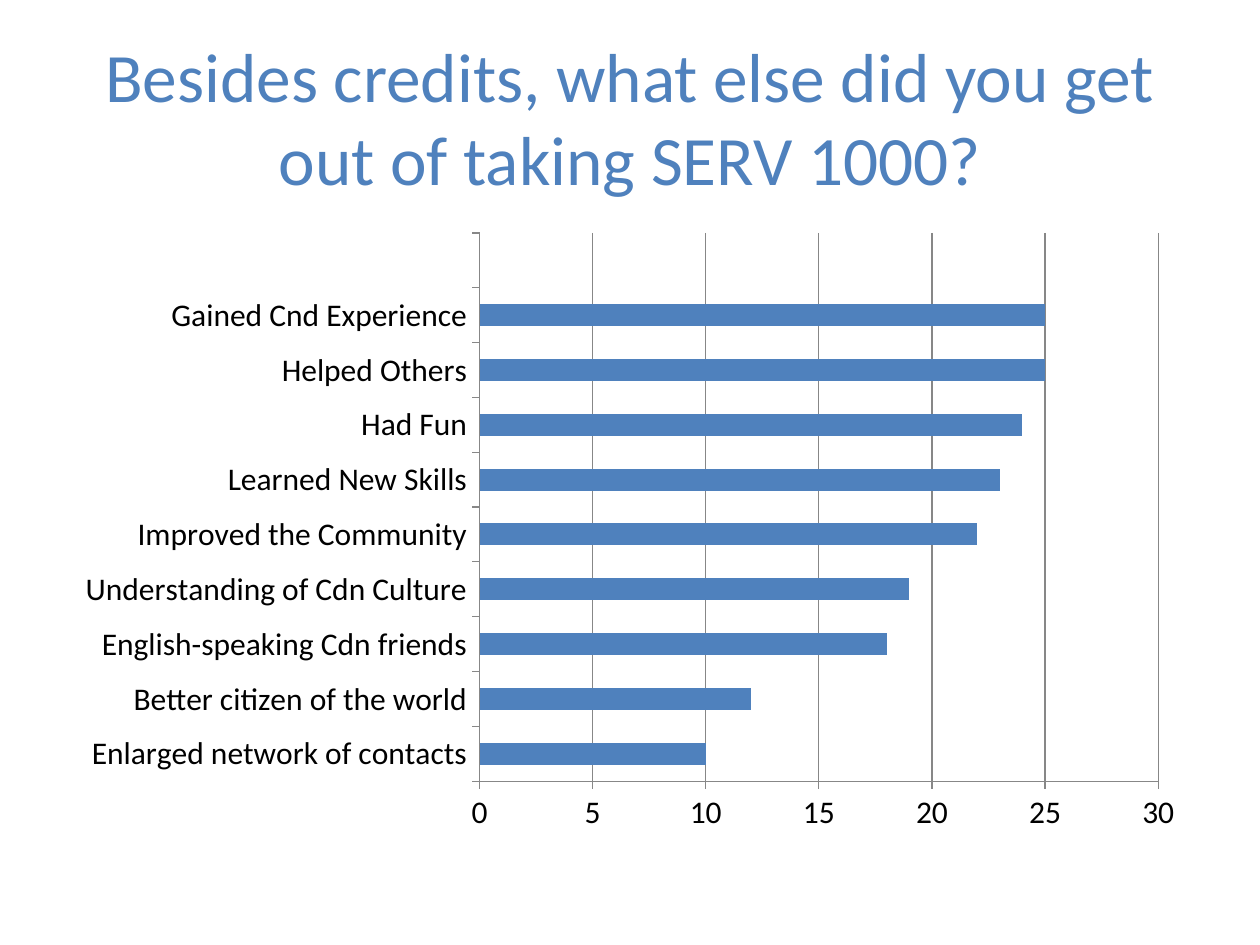
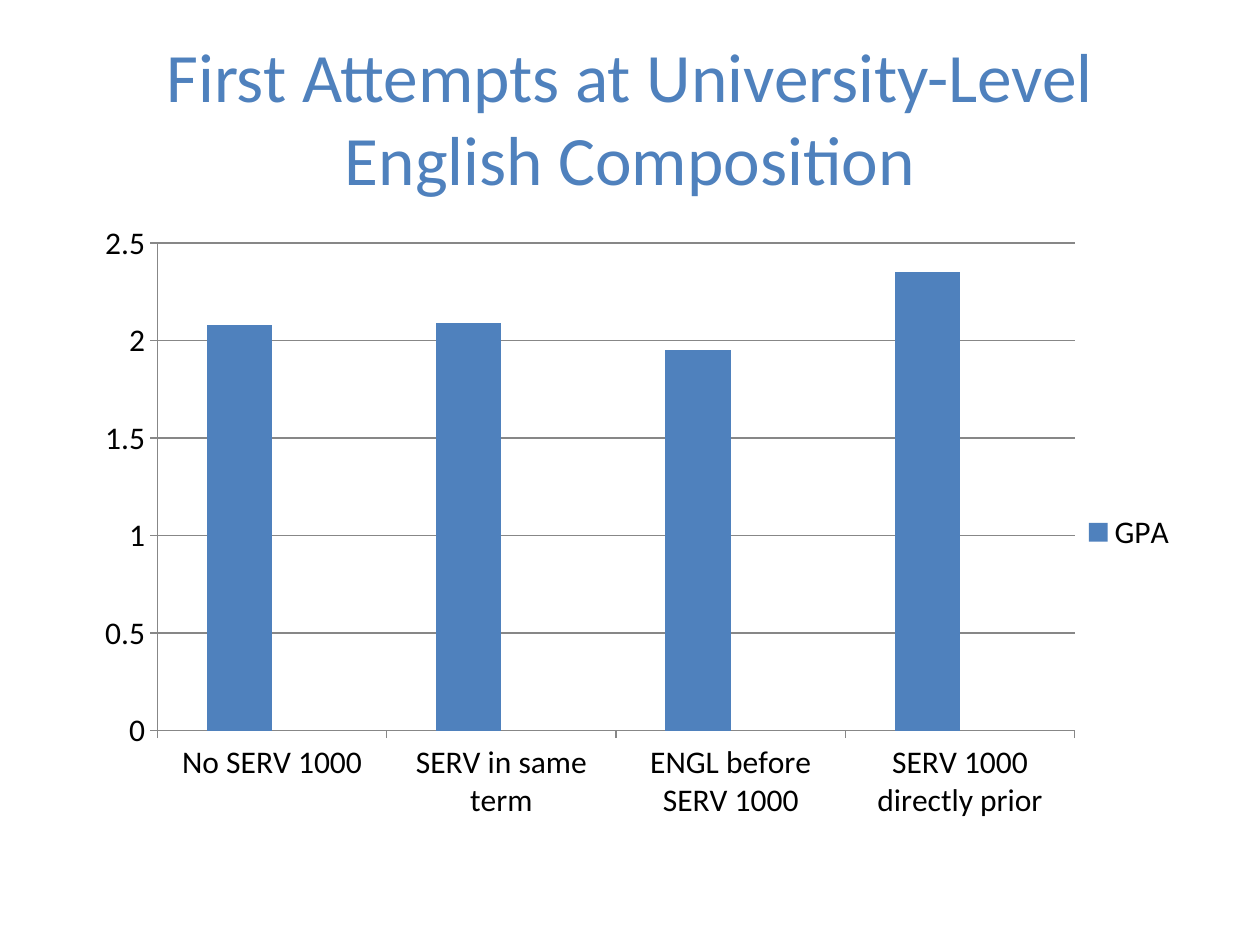
from lxml import etree
from pptx import Presentation
from pptx import util as u
from pptx.chart.data import CategoryChartData
from pptx.dml.color import RGBColor
from pptx.enum import chart as charts, text
from pptx.oxml import ns

COLORS = {"accent": "4F81BD", "second": "C0504D", "third": "9BBB59",
          "text": "000000", "line": "878787"}
FONT = "Calibri"
TITLE_BOX = (0.5, 0.3, 9, 1.25)
CHART_BOX = (0.5, 1.75, 9, 4.95)
GRADES_PLOT_BOX = (0.75, 0.18, 7.28, 3.87)

GAINS = {
    "Enlarged network of contacts": 10,
    "Better citizen of the world": 12,
    "English-speaking Cdn friends": 18,
    "Understanding of Cdn Culture": 19,
    "Improved the Community": 22,
    "Learned New Skills": 23,
    "Had Fun": 24,
    "Helped Others": 25,
    "Gained Cnd Experience": 25,
    "": None,
}
GRADES = {
    "No SERV 1000": 2.08,
    "SERV in same term": 2.09,
    "ENGL before SERV 1000": 1.95,
    "SERV 1000 directly prior": 2.35,
}


def color(name):
    return RGBColor.from_string(COLORS[name])


def style_font(font, size, name):
    font.name = FONT
    font.size = u.Pt(size)
    font.color.rgb = color(name)


def style_line(line):
    line.color.rgb = color("line")
    line.width = u.Pt(0.75)


def add_title(slide, box, words):
    frame = slide.shapes.add_textbox(*map(u.Inches, box)).text_frame
    frame.word_wrap = True
    frame.vertical_anchor = text.MSO_ANCHOR.MIDDLE
    paragraph = frame.paragraphs[0]
    paragraph.text = words
    paragraph.alignment = text.PP_ALIGN.CENTER
    style_font(paragraph.font, 39.6, "accent")


def drop_empty_data(chart):
    for bars in chart.plots[0].series:
        element = bars._element
        if not len(bars.values):
            for tag in ("c:cat", "c:val"):
                for data in element.findall(ns.qn(tag)):
                    element.remove(data)
        for point in element.findall(ns.qn("c:cat") + "//" + ns.qn("c:pt")):
            if not point.findtext(ns.qn("c:v")):
                point.getparent().remove(point)


def add_bar_chart(slide, box, kind, categories, series, maximum, step):
    data = CategoryChartData()
    data.categories = categories
    for name, values in series.items():
        data.add_series(name, values)
    chart = slide.shapes.add_chart(kind, *map(u.Inches, box), data).chart
    chart.has_title = False
    chart.has_legend = False
    style_font(chart.font, 18, "text")

    plot = chart.plots[0]
    plot.gap_width = 150
    plot.overlap = 0
    plot.vary_by_categories = False
    for bars, fill_name in zip(plot.series, ("accent", "second", "third")):
        bars.format.fill.solid()
        bars.format.fill.fore_color.rgb = color(fill_name)
    drop_empty_data(chart)

    for axis in (chart.category_axis, chart.value_axis):
        axis.major_tick_mark = charts.XL_TICK_MARK.OUTSIDE
        axis.minor_tick_mark = charts.XL_TICK_MARK.NONE
        style_line(axis.format.line)
    chart.category_axis.has_major_gridlines = False
    values_axis = chart.value_axis
    values_axis.minimum_scale = 0
    values_axis.maximum_scale = maximum
    values_axis.major_unit = step
    values_axis.has_major_gridlines = True
    style_line(values_axis.major_gridlines.format.line)
    return chart


def add_legend(chart, hidden_entry):
    chart.has_legend = True
    legend = chart.legend
    legend.position = charts.XL_LEGEND_POSITION.RIGHT
    legend.include_in_layout = False
    style_font(legend.font, 18, "text")
    entry = etree.Element(ns.qn("c:legendEntry"))
    etree.SubElement(entry, ns.qn("c:idx")).set("val", str(hidden_entry))
    etree.SubElement(entry, ns.qn("c:delete")).set("val", "1")
    legend._element.find(ns.qn("c:legendPos")).addnext(entry)


def set_plot_layout(chart, chart_box, plot_box):
    plot_area = chart._chartSpace.find(".//" + ns.qn("c:plotArea"))
    layout = plot_area.find(ns.qn("c:layout"))
    if layout is None:
        layout = etree.Element(ns.qn("c:layout"))
        plot_area.insert(0, layout)
    manual = etree.SubElement(layout, ns.qn("c:manualLayout"))
    chart_width, chart_height = chart_box[2:]
    left, top, width, height = plot_box
    settings = {"layoutTarget": "inner", "xMode": "edge", "yMode": "edge",
                "x": left / chart_width, "y": top / chart_height,
                "w": width / chart_width, "h": height / chart_height}
    for tag, value in settings.items():
        etree.SubElement(manual, ns.qn("c:" + tag)).set("val", str(value))


def build_gains_slide(slide):
    add_title(slide, TITLE_BOX,
              "Besides credits, what else did you get out of taking SERV 1000?")
    series = {"Series 1": list(GAINS.values()), "Series 2": [], "Series 3": []}
    add_bar_chart(slide, CHART_BOX, charts.XL_CHART_TYPE.BAR_CLUSTERED,
                  list(GAINS), series, 30, 5)


def build_grades_slide(slide):
    add_title(slide, TITLE_BOX, "First Attempts at University-Level English Composition")
    series = {"GPA ": list(GRADES.values()), "Series 2": [None] * len(GRADES), "Column2": []}
    chart = add_bar_chart(slide, CHART_BOX, charts.XL_CHART_TYPE.COLUMN_CLUSTERED,
                          list(GRADES), series, 2.5, 0.5)
    add_legend(chart, hidden_entry=1)
    set_plot_layout(chart, CHART_BOX, GRADES_PLOT_BOX)


def main():
    presentation = Presentation()
    presentation.slide_width = u.Inches(10)
    presentation.slide_height = u.Inches(7.5)
    for build in (build_gains_slide, build_grades_slide):
        build(presentation.slides.add_slide(presentation.slide_layouts[6]))
    presentation.save("out.pptx")


if __name__ == "__main__":
    main()
